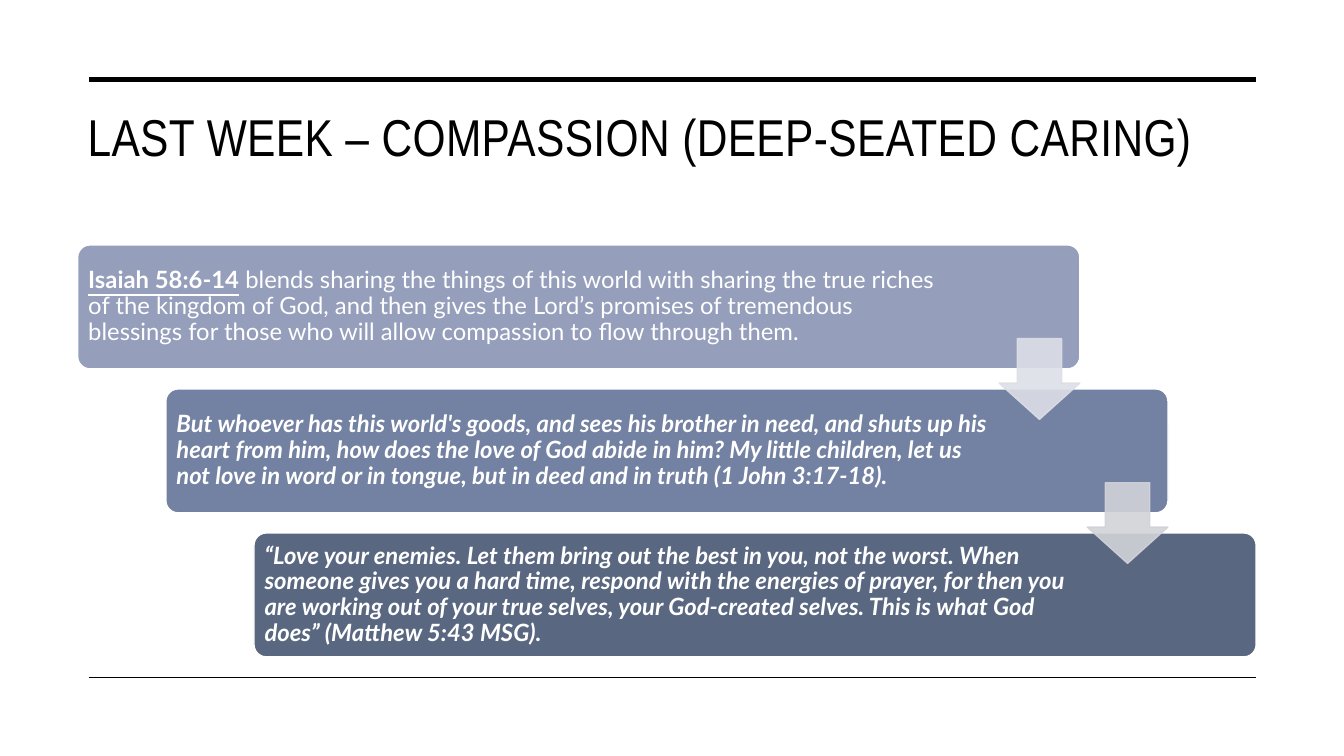
from lxml import etree
from pptx import Presentation, util as u
from pptx.dml.color import RGBColor
from pptx.enum import shapes, text
from pptx.oxml.ns import qn

THEME = {
    "ink": "000000", "paper": "FFFFFF",
    "cards": ["959EBB", "7381A2", "596781"],
    "arrows": ["DDDFE7", "D1D3D8"],
    "arrow_alpha": "90000",
    "title": {"name": "Arial Narrow", "size": u.Pt(37)},
    "body": {"name": "Lato", "size": u.Pt(17)},
}
REFERENCE = {"bold": True, "underline": True}
QUOTE = {"bold": True, "italic": True}

# Each card: text width in columns, then its runs
CARDS = [
    (64.59, [
        ("Isaiah 58:6-14", REFERENCE),
        (" blends sharing the things of this world with sharing the true riches "
         "of the kingdom of God, and then gives the Lord’s promises of tremendous "
         "blessings for those who will allow compassion to flow through them.", {}),
    ]),
    (61.44, [
        ("But whoever has this world's goods, and sees his brother in need, and "
         "shuts up his heart from him, how does the love of God abide in him? My "
         "little children, let us not love in word or in tongue, but in deed and "
         "in truth (1 John 3:17-18).", QUOTE),
    ]),
    (61.44, [
        ("“Love your enemies. Let them bring out the best in you, not the worst. "
         "When someone gives you a hard time, respond with the energies of prayer, "
         "for then you are working out of your true selves, your God-created "
         "selves. This is what God does” (Matthew 5:43 MSG).", QUOTE),
    ]),
]

prs = Presentation()
prs.slide_width, prs.slide_height = u.Inches(13.33), u.Inches(7.5)
s = prs.slides.add_slide(prs.slide_layouts[6])

# Grid of 100 columns by 100 rows; every card steps right and down
COL, ROW = prs.slide_width / 100, prs.slide_height / 100
LEFT, TOP, STEP_X, STEP_Y = 5.78, 32.4, 6.56, 19.05
CARD_W, CARD_H = 74.57, 16.4
ARROW_X, ARROW_Y, ARROW_W, ARROW_H = 74.34, 44.8, 6, 10.67


def add_block(preset, at, fill, line, adjustments):
    x, y, w, h = at
    sp = s.shapes.add_shape(preset, int(x * COL), int(y * ROW), int(w * COL), int(h * ROW))
    sp.shadow.inherit = False
    sp.fill.solid()
    sp.fill.fore_color.rgb = RGBColor.from_string(fill)
    sp.line.color.rgb = RGBColor.from_string(line)
    sp.line.width = u.Pt(1)
    for i, value in enumerate(adjustments):
        sp.adjustments[i] = value
    return sp


def add_text(at, runs, font, color, frame):
    """Place one paragraph of formatted runs and return it."""
    x, y, w, h = at
    tf = s.shapes.add_textbox(int(x * COL), int(y * ROW), int(w * COL), int(h * ROW)).text_frame
    for name, value in {"word_wrap": True, **frame}.items():
        setattr(tf, name, value)
    p = tf.paragraphs[0]
    for words, style in runs:
        r = p.add_run()
        r.text = words
        r.font.color.rgb = RGBColor.from_string(color)
        for name, value in {**font, **style}.items():
            setattr(r.font, name, value)
    return p


# Title between the rules
title = add_text((LEFT, 13.2, 87.7, 16.8),
                 [("LAST WEEK – COMPASSION (DEEP-SEATED CARING)", {})],
                 THEME["title"], THEME["ink"], {"vertical_anchor": text.MSO_ANCHOR.TOP})
title.runs[0]._r.get_or_add_rPr().set("spc", "30")

for y, weight in ((10.53, 3.5), (89.6, 1)):
    rule = s.shapes.add_connector(shapes.MSO_CONNECTOR.STRAIGHT, int(6.6 * COL), int(y * ROW),
                                  int(93.47 * COL), int(y * ROW))
    rule.line.color.rgb = RGBColor.from_string(THEME["ink"])
    rule.line.width = u.Pt(weight)
    etree.SubElement(rule._element.spPr, qn("a:effectLst"))

# Staggered cards
card_frame = {"vertical_anchor": text.MSO_ANCHOR.MIDDLE}
for side in ("left", "top", "right", "bottom"):
    card_frame[f"margin_{side}"] = u.Inches(0.07)

for i, (text_w, runs) in enumerate(CARDS):
    x, y = LEFT + i * STEP_X, TOP + i * STEP_Y
    add_block(shapes.MSO_SHAPE.ROUNDED_RECTANGLE, (x, y, CARD_W, CARD_H),
              THEME["cards"][i], THEME["paper"], [0.1])
    p = add_text((x + 0.26, y + 0.48, text_w, CARD_H - 0.96), runs,
                 THEME["body"], THEME["paper"], card_frame)
    p.line_spacing = 0.9

# Translucent arrows from each card to the next
for i, color in enumerate(THEME["arrows"]):
    arrow = add_block(shapes.MSO_SHAPE.DOWN_ARROW,
                      (ARROW_X + i * STEP_X, ARROW_Y + i * STEP_Y, ARROW_W, ARROW_H),
                      color, color, [0.55, 0.45])
    for clr in arrow._element.spPr.iter(qn("a:srgbClr")):
        etree.SubElement(clr, qn("a:alpha"), val=THEME["arrow_alpha"])

prs.save("out.pptx")
